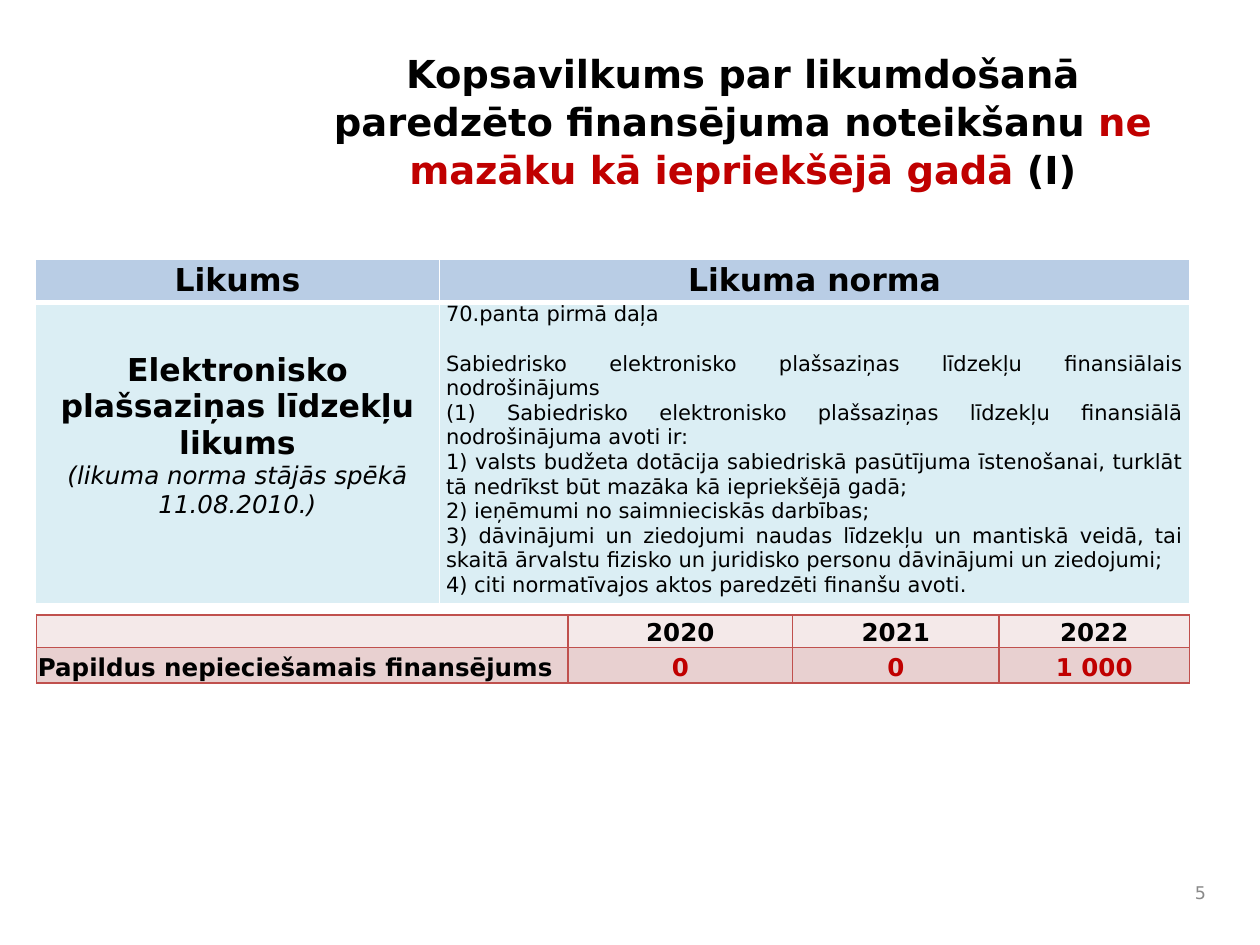
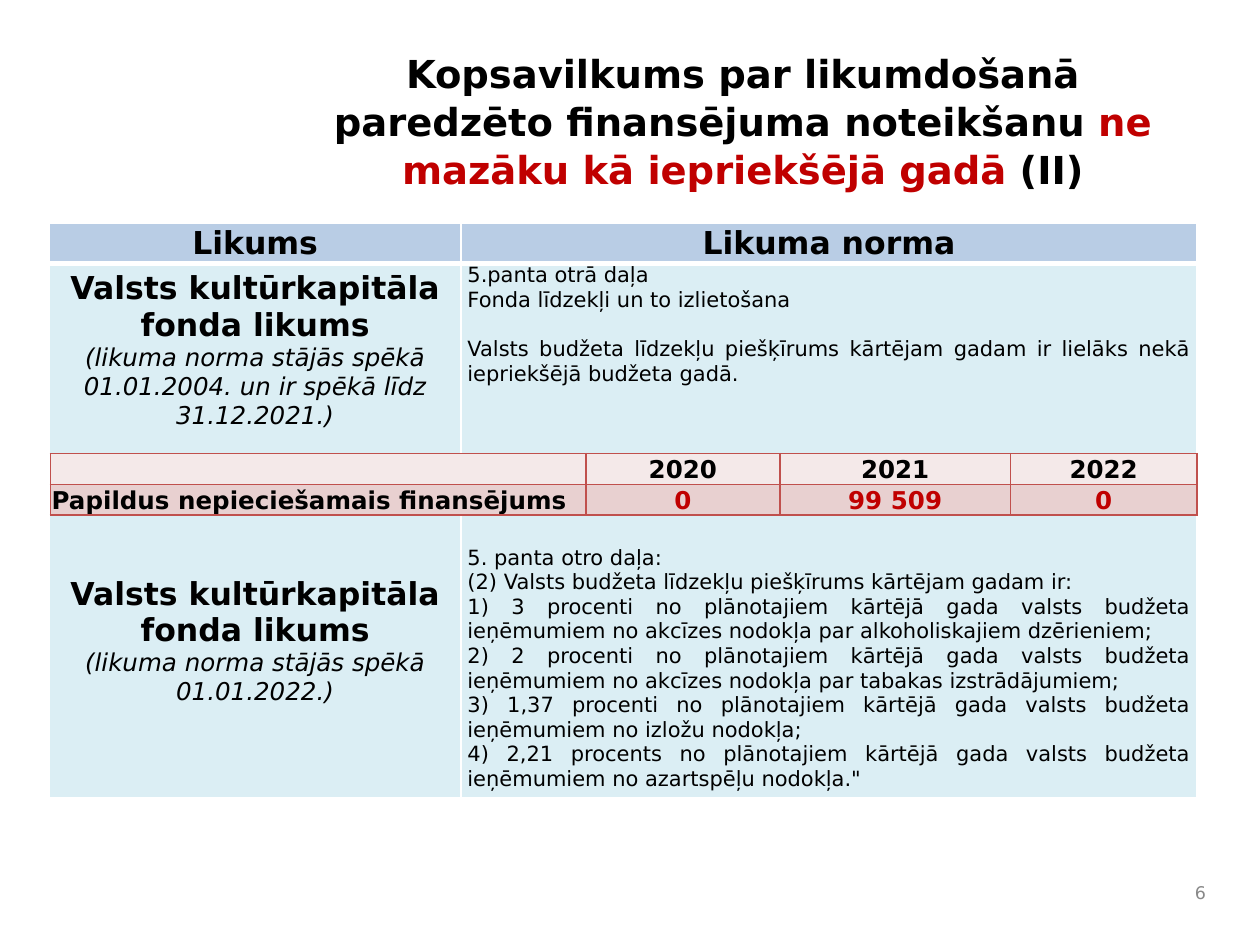
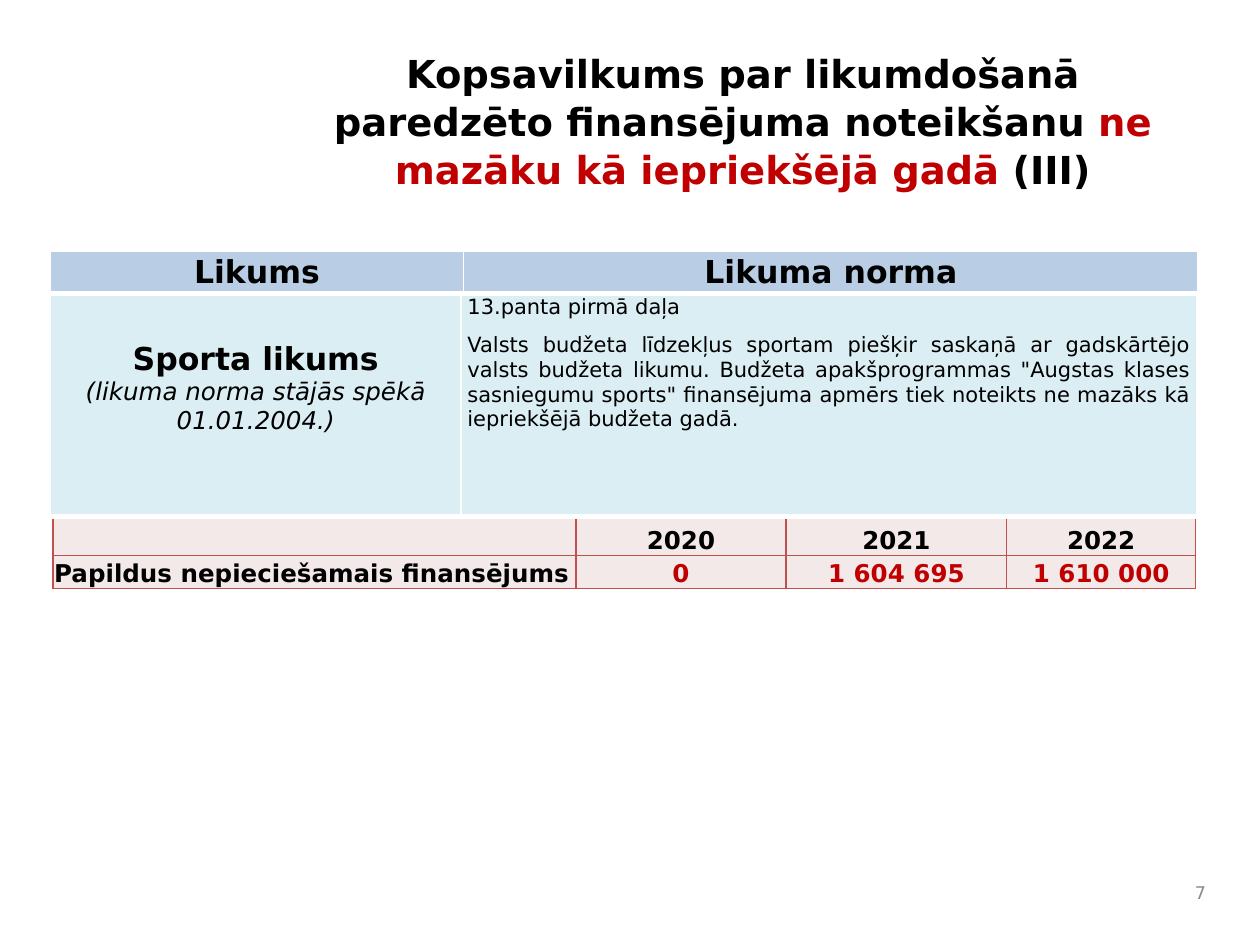
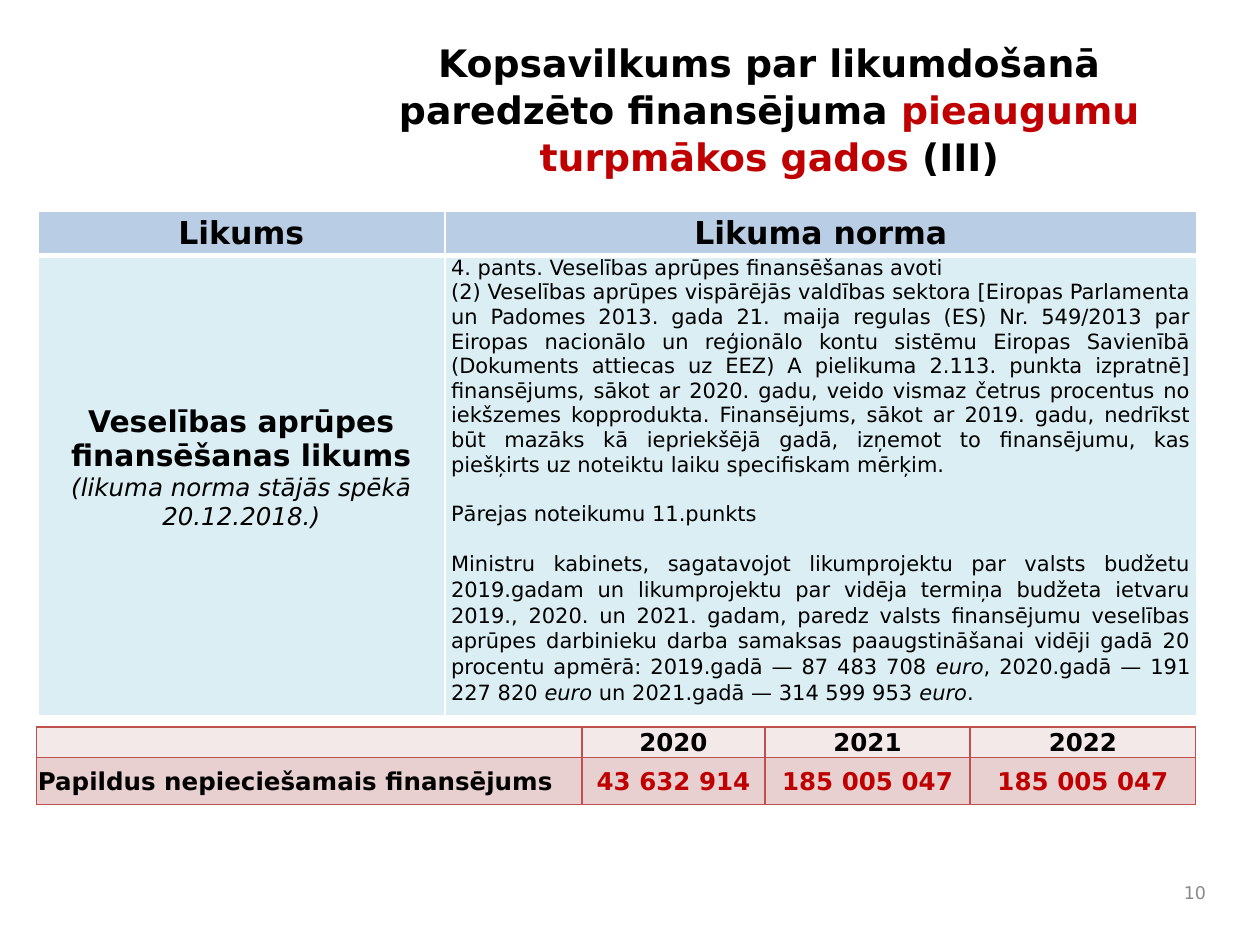
from lxml import etree
from pptx import Presentation
from pptx.dml.color import RGBColor
from pptx.enum.text import MSO_ANCHOR, MSO_AUTO_SIZE, PP_ALIGN
from pptx.oxml.ns import qn
from pptx.util import Inches, Pt

LEFT, CENTER, RIGHT, JUSTIFY = PP_ALIGN.LEFT, PP_ALIGN.CENTER, PP_ALIGN.RIGHT, PP_ALIGN.JUSTIFY
TOP, MIDDLE, BOTTOM = MSO_ANCHOR.TOP, MSO_ANCHOR.MIDDLE, MSO_ANCHOR.BOTTOM
NO_AUTOFIT = MSO_AUTO_SIZE.NONE
TITLE_ONLY = 5

BLACK = RGBColor(0x00, 0x00, 0x00)
WHITE = RGBColor(0xFF, 0xFF, 0xFF)
RED = RGBColor(0xC0, 0x00, 0x00)
GRAY = RGBColor(0x89, 0x89, 0x89)
HEADER_BLUE = RGBColor(0xB9, 0xCD, 0xE5)
BODY_BLUE = RGBColor(0xDB, 0xEE, 0xF4)
LIGHT_ROSE = RGBColor(0xF4, 0xE9, 0xE9)
ROSE = RGBColor(0xE8, 0xD0, 0xD0)
BORDER_RED = RGBColor(0xC0, 0x50, 0x4D)

FONT = "DejaVu Sans"
BLANK_LINE = Pt(14)
LAW_NAME = {"size": Pt(18), "bold": True}
LAW_DATE = {"size": Pt(14), "italic": True}
NORM = {"size": Pt(12)}
NORM_ITALIC = {"size": Pt(12), "italic": True}
YEAR = {"size": Pt(14), "bold": True}
AMOUNT = {**YEAR, "color": RED}
PAGE_NUMBER = {"size": Pt(10), "color": GRAY}

LAW_MARGINS = (0.05, 0, 0.05, 0)
LAW_NAME_MARGINS = (0.05, 0, 0.05, 0.28)
FINANCE_MARGINS = (0.01, 0.01, 0.01, 0)
YEARS = ("2020", "2021", "2022")
NOT_LESS = ("Kopsavilkums par likumdošanā paredzēto finansējuma noteikšanu ",
            "ne mazāku kā iepriekšējā gadā ")
GROWTH = ("Kopsavilkums par likumdošanā paredzēto finansējuma ",
          "pieaugumu turpmākos gados ")


def apply(target, values):
    for name, value in values.items():
        setattr(target, name, value)


def line(text, style, alignment=CENTER, **layout):
    return [(text, style)], {"alignment": alignment, **layout}


def norm(text, **layout):
    return line(text, NORM, JUSTIFY, **layout)


def write(frame, paragraphs):
    for index, (runs, layout) in enumerate(paragraphs):
        paragraph = frame.add_paragraph() if index else frame.paragraphs[0]
        apply(paragraph, layout)
        for text, style in runs:
            run = paragraph.add_run()
            run.text = text
            font_values = {"name": FONT, "bold": False, "italic": False, **style}
            run.font.color.rgb = font_values.pop("color", BLACK)
            apply(run.font, font_values)


def set_margins(target, margins):
    sides = ("margin_left", "margin_top", "margin_right", "margin_bottom")
    apply(target, dict(zip(sides, map(Inches, margins))))


def place(shape, left, top, width, height):
    box = zip(("left", "top", "width", "height"), (left, top, width, height))
    apply(shape, {name: Inches(value) for name, value in box})


def add_title(slide, words, part, box=(2.29, 0.33, 7.21, 0.92), size=22):
    title = slide.shapes.title
    place(title, *box)
    frame = title.text_frame
    apply(frame, {"auto_size": NO_AUTOFIT, "vertical_anchor": TOP, "word_wrap": True})
    set_margins(frame, (0.1, 0.05, 0.1, 0.05))
    style = {"size": Pt(size), "bold": True}
    runs = [(words[0], style), (words[1], {**style, "color": RED}), (f"({part})", style)]
    write(frame, [(runs, {"alignment": CENTER, "line_spacing": 1.04})])


def add_page_number(slide, number):
    box = slide.shapes.add_textbox(Inches(9.21), Inches(6.92), Inches(0.46), Inches(0.33))
    apply(box.text_frame, {"word_wrap": True, "vertical_anchor": MIDDLE})
    write(box.text_frame, [line(str(number), PAGE_NUMBER, RIGHT)])


def add_grid(slide, left, top, widths, heights):
    frame = slide.shapes.add_table(
        len(heights), len(widths), Inches(left), Inches(top),
        Inches(sum(widths)), Inches(sum(heights)))
    table = frame.table
    apply(table, {"first_row": False, "horz_banding": False})
    for column, width in zip(table.columns, widths):
        column.width = Inches(width)
    for row, height in zip(table.rows, heights):
        row.height = Inches(height)
    return table


def set_borders(cell, color, **widths):
    properties = cell._tc.get_or_add_tcPr()
    for index, side in enumerate("LRTB"):
        border = etree.Element(qn(f"a:ln{side}"), w=str(Pt(widths.get(side, 1))))
        fill = etree.SubElement(border, qn("a:solidFill"))
        etree.SubElement(fill, qn("a:srgbClr"), val=str(color))
        properties.insert(index, border)


def fill_cell(cell, paragraphs, color, border, anchor, margins, **border_widths):
    cell.fill.solid()
    cell.fill.fore_color.rgb = color
    cell.vertical_anchor = anchor
    set_margins(cell, margins)
    set_borders(cell, border, **border_widths)
    write(cell.text_frame, paragraphs)


def fill_law_header(table):
    for cell, text in zip(table.rows[0].cells, ("Likums", "Likuma norma")):
        fill_cell(cell, [line(text, LAW_NAME)], HEADER_BLUE, WHITE, MIDDLE, LAW_MARGINS, B=3)


def fill_law_row(table, row, law, date, norms, name_size=18,
                 name_margins=LAW_NAME_MARGINS, norm_top=0, **border_widths):
    name_style = {**LAW_NAME, "size": Pt(name_size)}
    name = [line(law, name_style), line(f"(likuma norma stājās spēkā {date})", LAW_DATE)]
    fill_cell(table.cell(row, 0), name, BODY_BLUE, WHITE, MIDDLE, name_margins, **border_widths)
    fill_cell(table.cell(row, 1), norms, BODY_BLUE, WHITE, TOP,
              (0.05, norm_top, 0.05, 0), **border_widths)


def add_finance_table(slide, left, top, widths, heights, amounts, anchor=BOTTOM, amount_fill=ROSE):
    table = add_grid(slide, left, top, widths, heights)
    label = line("Papildus nepieciešamais finansējums", YEAR, LEFT)
    rows = (
        (LIGHT_ROSE, [[]] + [[line(year, YEAR)] for year in YEARS]),
        (amount_fill, [[label]] + [[line(amount, AMOUNT)] for amount in amounts]),
    )
    for row, (color, contents) in zip(table.rows, rows):
        for cell, paragraphs in zip(row.cells, contents):
            fill_cell(cell, paragraphs, color, BORDER_RED, anchor, FINANCE_MARGINS)
    empty = table.cell(0, 0).text_frame.paragraphs[0]
    etree.SubElement(empty._p, qn("a:endParaRPr"), sz="1000")


def add_media_law(slide):
    add_title(slide, NOT_LESS, "I")
    add_page_number(slide, 5)
    table = add_grid(slide, 0.28, 2.06, (3.21, 5.95), (0.34, 2.33))
    fill_law_header(table)
    fill_law_row(table, 1, "Elektronisko plašsaziņas līdzekļu likums", "11.08.2010.", [
        norm("70.panta pirmā daļa"),
        norm("Sabiedrisko elektronisko plašsaziņas līdzekļu finansiālais nodrošinājums",
             space_before=BLANK_LINE),
        norm("(1) Sabiedrisko elektronisko plašsaziņas līdzekļu finansiālā nodrošinājuma avoti ir:"),
        norm("1) valsts budžeta dotācija sabiedriskā pasūtījuma īstenošanai, turklāt tā "
             "nedrīkst būt mazāka kā iepriekšējā gadā;"),
        norm("2) ieņēmumi no saimnieciskās darbības;"),
        norm("3) dāvinājumi un ziedojumi naudas līdzekļu un mantiskā veidā, tai skaitā "
             "ārvalstu fizisko un juridisko personu dāvinājumi un ziedojumi;"),
        norm("4) citi normatīvajos aktos paredzēti finanšu avoti."),
    ], T=3)
    add_finance_table(slide, 0.29, 4.88, (4.22, 1.78, 1.64, 1.51), (0.26, 0.28),
                      ("0", "0", "1 000"))


def add_culture_law(slide):
    add_title(slide, NOT_LESS, "II")
    add_page_number(slide, 6)
    table = add_grid(slide, 0.39, 1.77, (3.27, 5.84), (0.32, 1.66, 2.54))
    fill_law_header(table)
    law = "Valsts kultūrkapitāla fonda likums"
    fill_law_row(table, 1, law, "01.01.2004. un ir spēkā līdz 31.12.2021.", [
        norm("5.panta otrā daļa"),
        norm("Fonda līdzekļi un to izlietošana"),
        norm("Valsts budžeta līdzekļu piešķīrums kārtējam gadam ir lielāks nekā "
             "iepriekšējā budžeta gadā.", space_before=BLANK_LINE),
    ], T=3)
    shares = (
        ("3 procenti", "akcīzes nodokļa par alkoholiskajiem dzērieniem;"),
        ("2 procenti", "akcīzes nodokļa par tabakas izstrādājumiem;"),
        ("1,37 procenti", "izložu nodokļa;"),
        ("2,21 procents", "azartspēļu nodokļa.\""),
    )
    fill_law_row(table, 2, law, "01.01.2022.", [
        norm("5. panta otro daļa:"),
        norm("(2) Valsts budžeta līdzekļu piešķīrums kārtējam gadam ir:"),
        *(norm(f"{number}) {share} no plānotajiem kārtējā gada valsts budžeta ieņēmumiem no {source}")
          for number, (share, source) in enumerate(shares, 1)),
    ], name_margins=(0.05, 0.1, 0.05, 0), norm_top=0.58)
    add_finance_table(slide, 0.4, 3.6, (4.25, 1.54, 1.83, 1.48), (0.24, 0.24),
                      ("0", "99 509", "0"))


def add_sport_law(slide):
    add_title(slide, NOT_LESS, "III")
    add_page_number(slide, 7)
    add_finance_table(slide, 0.42, 4.09, (4.15, 1.67, 1.75, 1.5), (0.32, 0.26),
                      ("0", "1 604 695", "1 610 000"), amount_fill=LIGHT_ROSE)
    body = add_grid(slide, 0.4, 2.34, (3.26, 5.84), (1.76,))
    fill_law_row(body, 0, "Sporta likums", "01.01.2004.", [
        norm("13.panta pirmā daļa"),
        norm("Valsts budžeta līdzekļus sportam piešķir saskaņā ar gadskārtējo valsts budžeta "
             "likumu. Budžeta apakšprogrammas \"Augstas klases sasniegumu sports\" finansējuma "
             "apmērs tiek noteikts ne mazāks kā iepriekšējā budžeta gadā.", space_before=Pt(8)),
    ], B=3)
    fill_law_header(add_grid(slide, 0.4, 1.99, (3.28, 5.83), (0.34,)))


def add_health_law(slide):
    add_title(slide, GROWTH, "III", (2.77, 0.25, 6.67, 1.17), 21.6)
    add_page_number(slide, 10)
    table = add_grid(slide, 0.3, 1.68, (3.23, 5.97), (0.35, 3.57))
    fill_law_header(table)
    pay_runs = [
        ("Ministru kabinets, sagatavojot likumprojektu par valsts budžetu 2019.gadam un "
         "likumprojektu par vidēja termiņa budžeta ietvaru 2019., 2020. un 2021. gadam, "
         "paredz valsts finansējumu veselības aprūpes darbinieku darba samaksas "
         "paaugstināšanai vidēji gadā 20 procentu apmērā: 2019.gadā — 87 483 708 ", NORM),
        ("euro", NORM_ITALIC),
        (", 2020.gadā — 191 227 820 ", NORM),
        ("euro", NORM_ITALIC),
        (" un 2021.gadā — 314 599 953 ", NORM),
        ("euro", NORM_ITALIC),
        (".", NORM),
    ]
    pay_layout = {"alignment": JUSTIFY, "space_before": BLANK_LINE, "line_spacing": 1.05}
    fill_law_row(table, 1, "Veselības aprūpes finansēšanas likums", "20.12.2018.", [
        norm("4. pants. Veselības aprūpes finansēšanas avoti"),
        norm("(2) Veselības aprūpes vispārējās valdības sektora [Eiropas Parlamenta un Padomes "
             "2013. gada 21. maija regulas (ES) Nr. 549/2013 par Eiropas nacionālo un reģionālo "
             "kontu sistēmu Eiropas Savienībā (Dokuments attiecas uz EEZ) A pielikuma 2.113. "
             "punkta izpratnē] finansējums, sākot ar 2020. gadu, veido vismaz četrus procentus "
             "no iekšzemes kopprodukta. Finansējums, sākot ar 2019. gadu, nedrīkst būt mazāks kā "
             "iepriekšējā gadā, izņemot to finansējumu, kas piešķirts uz noteiktu laiku "
             "specifiskam mērķim."),
        norm("Pārejas noteikumu 11.punkts", space_before=BLANK_LINE),
        (pay_runs, pay_layout),
    ], name_size=17, T=3)
    add_finance_table(slide, 0.29, 5.77, (4.33, 1.45, 1.63, 1.79), (0.24, 0.37),
                      ("43 632 914", "185 005 047", "185 005 047"), anchor=MIDDLE)


def main():
    presentation = Presentation()
    presentation.slide_width = Inches(10)
    presentation.slide_height = Inches(7.5)
    layout = presentation.slide_layouts[TITLE_ONLY]
    for build in (add_media_law, add_culture_law, add_sport_law, add_health_law):
        build(presentation.slides.add_slide(layout))
    presentation.save("out.pptx")


if __name__ == "__main__":
    main()
